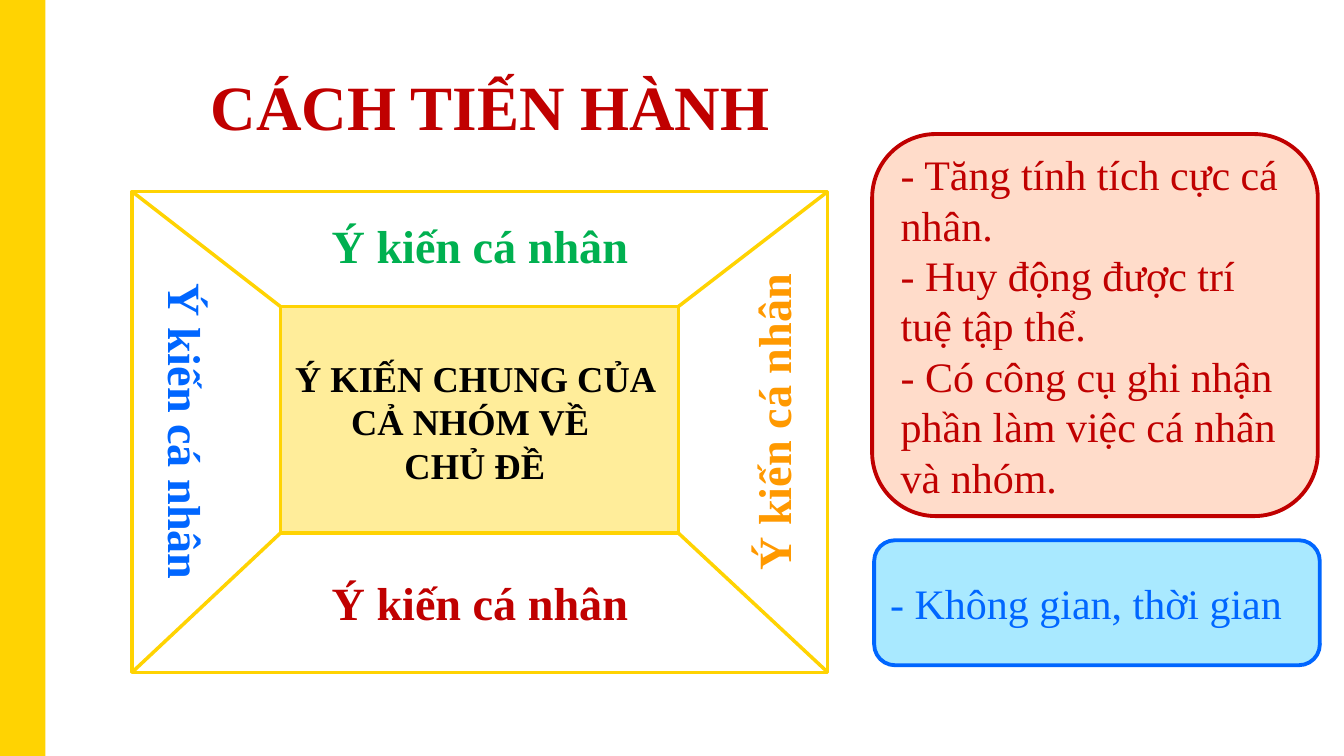
import pptx
import pptx.util
import pptx.dml.color
import pptx.enum.shapes
import pptx.enum.text
import pptx.oxml.ns
import lxml.etree

Inches, Pt = pptx.util.Inches, pptx.util.Pt
SHAPES = pptx.enum.shapes.MSO_SHAPE
ALIGN = pptx.enum.text.PP_ALIGN
ANCHOR = pptx.enum.text.MSO_ANCHOR

FONT = "Times New Roman"
COLORS = {
    "yellow": "FFD302", "pale yellow": "FFED9A", "red": "C00000",
    "green": "00B050", "orange": "FF9900", "blue": "0066FF",
    "salmon": "FF9966", "sky": "33CCFF", "black": "000000",
}

TITLE = "CÁCH TIẾN HÀNH"
OPINION = "Ý kiến cá nhân"
OPINION_SIZE = (4.34, 0.66)
# centre x, centre y, rotation, colour
OPINIONS = [
    (4.76, 2.44, 0, "green"),
    (7.67, 4.19, 270, "orange"),
    (4.76, 5.98, 0, "red"),
    (1.85, 4.28, 90, "blue"),
]
SHARED_OPINION = ["Ý KIẾN CHUNG CỦA CẢ NHÓM VỀ ", "CHỦ ĐỀ"]
# left, top, width, height
OUTER = (1.31, 1.9, 6.9, 4.77)
INNER = (2.78, 3.04, 3.95, 2.25)
# place, fill, opacity in percent, line and text colour, lines
NOTES = [
    ((8.65, 1.33, 4.42, 3.79), "salmon", 34, "red", [
        "- Tăng tính tích cực cá nhân.",
        "- Huy động được trí tuệ tập thể.",
        "- Có công cụ ghi nhận phần làm việc cá nhân và nhóm.",
    ]),
    ((8.67, 5.36, 4.42, 1.24), "sky", 42, "blue", ["- Không gian, thời gian"]),
]


def rgb(name):
    return pptx.dml.color.RGBColor.from_string(COLORS[name])


def add_panel(page, kind, place, fill=None, opacity=100, line=None, weight=2.5):
    panel = page.shapes.add_shape(kind, *map(Inches, place))
    panel.shadow.inherit = False
    if fill:
        panel.fill.solid()
        panel.fill.fore_color.rgb = rgb(fill)
        if opacity < 100:
            qn = pptx.oxml.ns.qn
            color = panel.fill._xPr.find(qn("a:solidFill")).find(qn("a:srgbClr"))
            lxml.etree.SubElement(color, qn("a:alpha"), val=str(opacity * 1000))
    else:
        panel.fill.background()
    if line:
        panel.line.color.rgb = rgb(line)
        panel.line.width = Pt(weight)
    else:
        panel.line.fill.background()
    return panel


def write(shape, lines, size, color, bold=False, align=ALIGN.LEFT,
          anchor=ANCHOR.TOP, spacing=None, before=None):
    frame = shape.text_frame
    frame.word_wrap = True
    frame.vertical_anchor = anchor
    for index, line in enumerate(lines):
        para = frame.add_paragraph() if index else frame.paragraphs[0]
        para.alignment = align
        if spacing:
            para.line_spacing = spacing
        if before:
            para.space_before = Pt(before)
        span = para.add_run()
        span.text = line
        span.font.name = FONT
        span.font.size = Pt(size)
        span.font.bold = bold
        span.font.color.rgb = rgb(color)


def add_text(page, place, lines, rotation=0, **style):
    box = page.shapes.add_textbox(*map(Inches, place))
    box.rotation = rotation
    write(box, lines, **style)


def add_line(page, start, end, color, weight):
    line = page.shapes.add_connector(
        pptx.enum.shapes.MSO_CONNECTOR.STRAIGHT, *map(Inches, start + end))
    line.line.color.rgb = rgb(color)
    line.line.width = Pt(weight)
    lxml.etree.SubElement(line._element.spPr, pptx.oxml.ns.qn("a:effectLst"))


def corners(place):
    left, top, width, height = place
    return [(x, y) for x in (left, left + width) for y in (top, top + height)]


def main():
    deck = pptx.Presentation()
    deck.slide_width, deck.slide_height = Inches(13.33), Inches(7.5)
    page = deck.slides.add_slide(deck.slide_layouts[6])

    add_panel(page, SHAPES.RECTANGLE, (0, 0, 0.45, 7.5), fill="yellow")
    add_text(page, (1.99, 0.7, 6.22, 0.79), [TITLE], size=45, color="red",
             bold=True, anchor=ANCHOR.MIDDLE, spacing=0.9, before=10)

    add_panel(page, SHAPES.RECTANGLE, INNER, fill="pale yellow", line="yellow")
    add_panel(page, SHAPES.RECTANGLE, OUTER, line="yellow")
    for start, end in zip(corners(OUTER), corners(INNER)):
        add_line(page, start, end, "yellow", 2.5)

    width, height = OPINION_SIZE
    for x, y, rotation, color in OPINIONS:
        add_text(page, (x - width / 2, y - height / 2, width, height), [OPINION],
                 rotation=rotation, size=33, color=color, bold=True,
                 align=ALIGN.CENTER)

    for place, fill, opacity, color, lines in NOTES:
        note = add_panel(page, SHAPES.ROUNDED_RECTANGLE, place, fill=fill,
                         opacity=opacity, line=color, weight=2.75)
        write(note, lines, size=30, color=color, anchor=ANCHOR.MIDDLE)

    add_text(page, (2.54, 3.48, 4.34, 1.41), SHARED_OPINION, size=26,
             color="black", bold=True, align=ALIGN.CENTER)
    deck.save("out.pptx")


if __name__ == "__main__":
    main()
